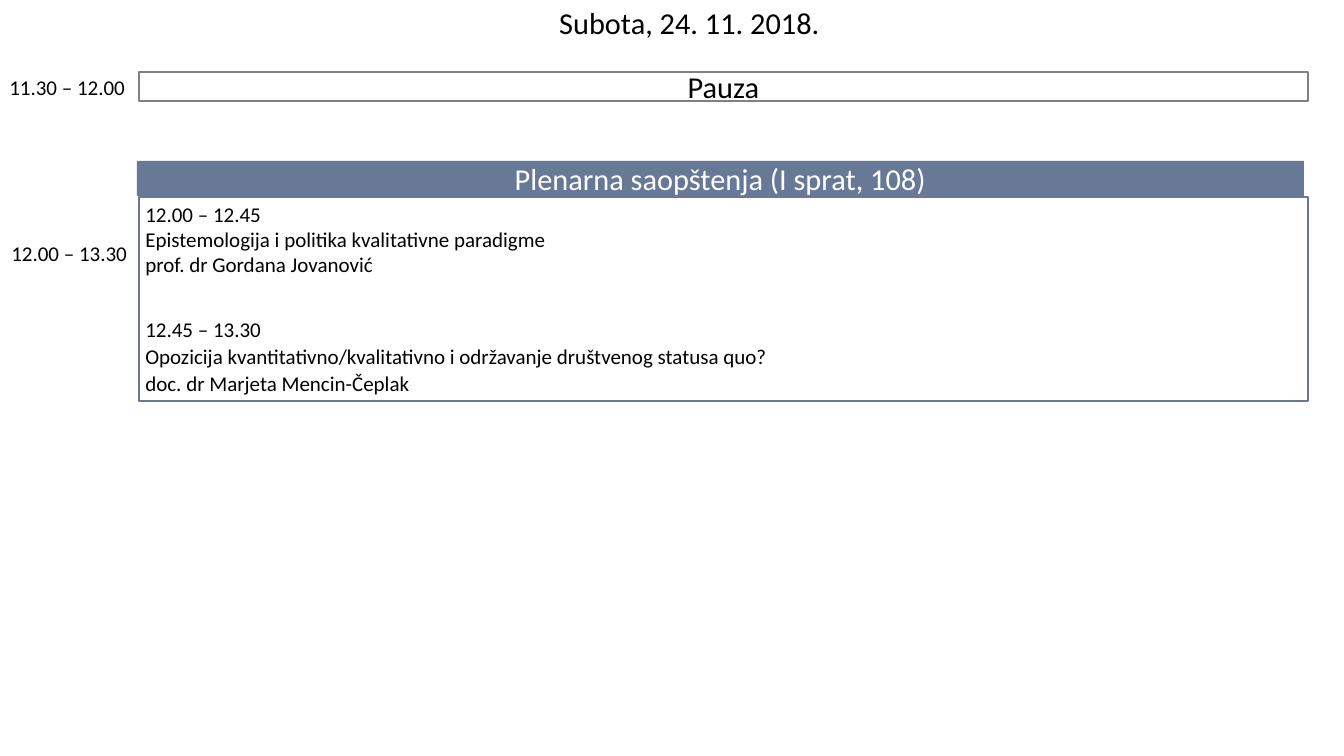
from dataclasses import dataclass

from pptx import Presentation
from pptx.dml.color import RGBColor
from pptx.enum.shapes import MSO_SHAPE
from pptx.enum.text import MSO_ANCHOR, PP_ALIGN
from pptx.slide import Slide
from pptx.text.text import TextFrame
from pptx.util import Emu, Pt

PX = 914400 / 84
FONT = "Calibri"
BLACK, WHITE, GREY, SLATE = "000000", "FFFFFF", "808080", "677997"
HEADING, BODY = 26, 18


@dataclass
class Line:
    text: str
    after: int = 0
    spacing: float = 1.0


@dataclass
class Bar:
    x: int
    y: int
    w: int
    h: int
    text: str = ""
    fill: str | None = None
    line: str | None = None
    color: str = BLACK


@dataclass
class Label:
    x: int
    y: int
    w: int
    h: int
    lines: list[Line]
    size: int = BODY
    align: PP_ALIGN = PP_ALIGN.LEFT


BARS = [
    Bar(139, 197, 1169, 204, line=SLATE),
    Bar(139, 72, 1169, 29, "Pauza", line=GREY),
    Bar(137, 161, 1167, 35, "Plenarna saopštenja (I sprat, 108)", fill=SLATE, color=WHITE),
]

TALKS = [
    Line("12.00 – 12.45"),
    Line("Epistemologija i politika kvalitativne paradigme"),
    Line("prof. dr Gordana Jovanović", after=34),
    Line("12.45 – 13.30"),
    Line("Opozicija kvantitativno/kvalitativno i održavanje društvenog statusa quo?", spacing=1.07),
    Line("doc. dr Marjeta Mencin-Čeplak", spacing=1.07),
]

LABELS = [
    Label(301, 0, 777, 45, [Line("Subota, 24. 11. 2018.")], HEADING, PP_ALIGN.CENTER),
    Label(1, 70, 140, 34, [Line("11.30 – 12.00")]),
    Label(3, 236, 140, 34, [Line("12.00 – 13.30")]),
    Label(137, 197, 1165, 237, TALKS),
]


def rgb(color: str) -> RGBColor:
    return RGBColor.from_string(color)


def place(box: Bar | Label) -> list[Emu]:
    return [Emu(round(v * PX)) for v in (box.x, box.y, box.w, box.h)]


def write(tf: TextFrame, lines: list[Line], size: int, color: str, align: PP_ALIGN) -> None:
    tf.word_wrap = True
    for i, line in enumerate(lines):
        p = tf.add_paragraph() if i else tf.paragraphs[0]
        p.text = line.text
        p.alignment = align
        p.space_after = Pt(line.after)
        p.line_spacing = line.spacing
        p.font.name = FONT
        p.font.size = Pt(size)
        p.font.color.rgb = rgb(color)


def draw_bar(s: Slide, bar: Bar) -> None:
    sp = s.shapes.add_shape(MSO_SHAPE.RECTANGLE, *place(bar))
    sp.shadow.inherit = False
    if bar.fill:
        sp.fill.solid()
        sp.fill.fore_color.rgb = rgb(bar.fill)
    else:
        sp.fill.background()
    if bar.line:
        sp.line.color.rgb = rgb(bar.line)
        sp.line.width = Pt(2)
    else:
        sp.line.fill.background()
    if bar.text:
        sp.text_frame.vertical_anchor = MSO_ANCHOR.MIDDLE
        write(sp.text_frame, [Line(bar.text)], HEADING, bar.color, PP_ALIGN.CENTER)


def draw_label(s: Slide, label: Label) -> None:
    tf = s.shapes.add_textbox(*place(label)).text_frame
    write(tf, label.lines, label.size, BLACK, label.align)


def main() -> None:
    prs = Presentation()
    prs.slide_width = Emu(round(1344 * PX))
    prs.slide_height = Emu(round(756 * PX))
    s = prs.slides.add_slide(prs.slide_layouts[6])

    # Frames and headings
    for bar in BARS:
        draw_bar(s, bar)

    # Date, time slots and talks
    for label in LABELS:
        draw_label(s, label)

    prs.save("out.pptx")


if __name__ == "__main__":
    main()
